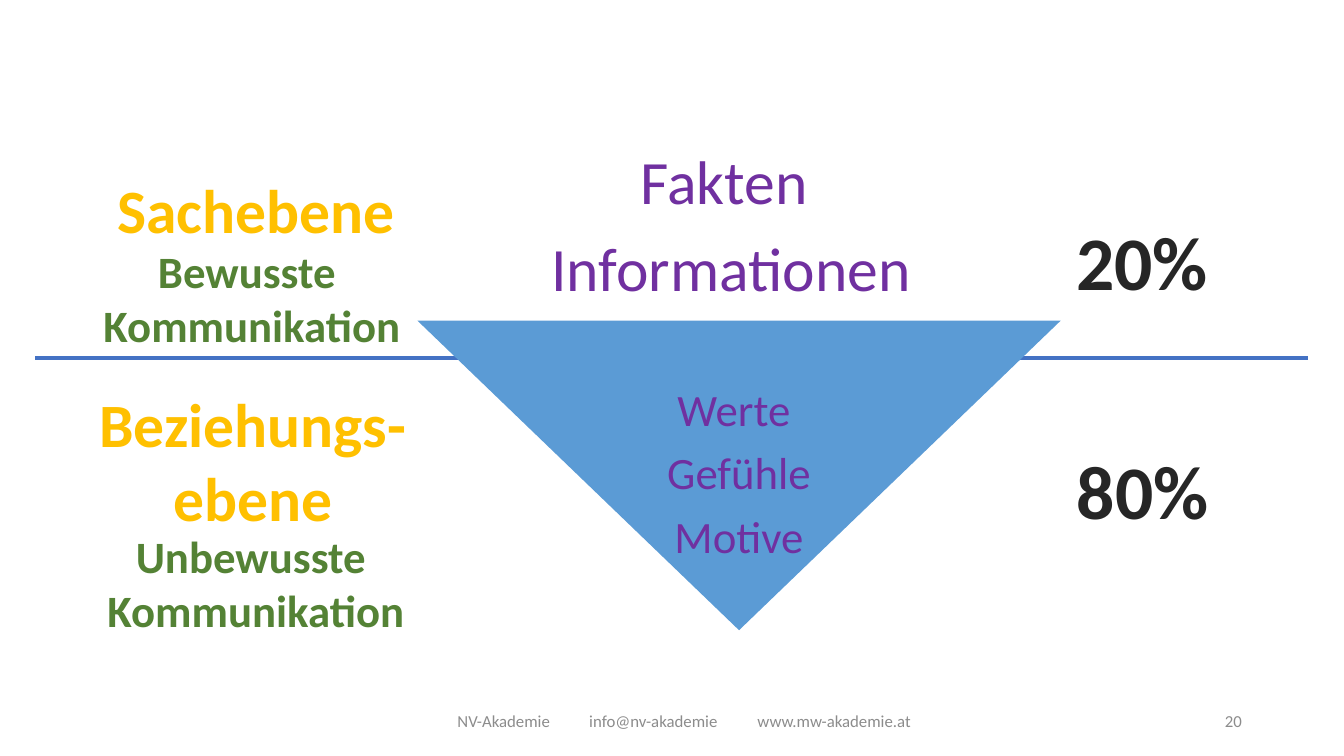
import pptx
import pptx.util
import pptx.dml.color
import pptx.enum.shapes
import pptx.enum.text
import pptx.oxml
import pptx.oxml.ns
from pptx.util import Cm

FONT = "Calibri"
COLORS = {
    "line": "4472C4",
    "cone": "5B9BD5",
    "word": "7030A0",
    "level": "FFC000",
    "mode": "548235",
    "share": "262626",
    "foot": "8C8C8C",
}
ALIGN = pptx.enum.text.PP_ALIGN
ANCHOR = pptx.enum.text.MSO_ANCHOR
FIT = pptx.enum.text.MSO_AUTO_SIZE


def color(name):
    return pptx.dml.color.RGBColor.from_string(COLORS[name])


def place(shape, left, top, width, height):
    shape.left, shape.top = Cm(left), Cm(top)
    shape.width, shape.height = Cm(width), Cm(height)


def write(frame, lines, size, tone, bold=False, align=ALIGN.CENTER):
    """Fill a frame with one paragraph per line."""
    for i, line in enumerate(lines):
        para = frame.paragraphs[0] if i == 0 else frame.add_paragraph()
        para.alignment = align
        run = para.add_run()
        run.text = line
        run.font.name = FONT
        run.font.size = pptx.util.Pt(size)
        run.font.bold = bold
        run.font.color.rgb = color(tone)


def add_label(slide, lines, area, size, tone):
    """Bold heading that keeps its line breaks."""
    box = slide.shapes.add_textbox(0, 0, 0, 0)
    place(box, *area)
    box.text_frame.word_wrap = False
    box.text_frame.auto_size = FIT.SHAPE_TO_FIT_TEXT
    write(box.text_frame, lines, size, tone, bold=True)


def add_foot(slide, text, area, align):
    box = slide.shapes.add_textbox(0, 0, 0, 0)
    place(box, *area)
    frame = box.text_frame
    frame.word_wrap = True
    frame.vertical_anchor = ANCHOR.MIDDLE
    write(frame, [text], 12, "foot", align=align)
    return frame


def set_tabs(para, stops):
    props = para._p.get_or_add_pPr()
    tabs = pptx.oxml.parse_xml(
        "<a:tabLst %s/>" % pptx.oxml.ns.nsdecls("a"))
    for stop in stops:
        tab = tabs.makeelement(pptx.oxml.ns.qn("a:tab"),
                               {"pos": str(Cm(stop)), "algn": "l"})
        tabs.append(tab)
    props.append(tabs)


def fill_list(slide, index, lines, area, inset, size):
    """Centred list in a body placeholder, brought to the front."""
    body = slide.placeholders[index]
    place(body, *area)
    slide.shapes._spTree.append(body._element)
    frame = body.text_frame
    frame.word_wrap = True
    frame.auto_size = FIT.NONE
    frame.vertical_anchor = ANCHOR.MIDDLE
    frame.margin_left = frame.margin_right = Cm(inset)
    frame.margin_top = frame.margin_bottom = Cm(inset)
    write(frame, lines, size, "word")
    for para in frame.paragraphs:
        props = para._p.get_or_add_pPr()
        props.set("marL", "0")
        props.set("indent", "0")
        props.append(pptx.oxml.parse_xml(
            "<a:buNone %s/>" % pptx.oxml.ns.nsdecls("a")))
        para.line_spacing = 0.9
        para.space_before = pptx.util.Pt(0)
        para.space_after = pptx.util.Pt(round(size / 3, 1))


def add_rule(slide, left, right, top):
    rule = slide.shapes.add_connector(
        pptx.enum.shapes.MSO_CONNECTOR.STRAIGHT,
        Cm(left), Cm(top), Cm(right), Cm(top))
    rule.line.color.rgb = color("line")
    rule.line.width = pptx.util.Pt(2.25)
    rule._element.spPr.append(pptx.oxml.parse_xml(
        "<a:effectLst %s/>" % pptx.oxml.ns.nsdecls("a")))


def add_cone(slide, area):
    """Trapezoid narrowed to a tip and turned upside down."""
    cone = slide.shapes.add_shape(
        pptx.enum.shapes.MSO_SHAPE.TRAPEZOID, 0, 0, 0, 0)
    place(cone, *area)
    cone.adjustments[0] = 1.04
    cone.rotation = 180
    cone.shadow.inherit = False
    cone.fill.solid()
    cone.fill.fore_color.rgb = color("cone")
    cone.line.fill.background()


def main():
    deck = pptx.Presentation()
    deck.slide_width, deck.slide_height = Cm(33.87), Cm(19.05)
    slide = deck.slides.add_slide(deck.slide_layouts.get_by_name("Two Content"))
    title = slide.shapes.title._element
    title.getparent().remove(title)

    # Waterline and footer
    add_rule(slide, 0.89, 32.97, 9.02)
    foot = add_foot(slide, "NV-Akademie\tinfo@nv-akademie\twww.mw-akademie.at",
                    (11.23, 17.65, 12.12, 1.02), ALIGN.LEFT)
    foot.margin_left = Cm(0.3)
    set_tabs(foot.paragraphs[0], [3.32, 7.56])
    add_foot(slide, "20", (23.93, 17.65, 7.62, 1.02), ALIGN.RIGHT)

    # Cone with the visible and the hidden part
    cone = (10.52, 8.08, 16.21, 7.8)
    fill_list(slide, 1, ["Fakten ", "Informationen"],
              (10.13, 1.98, 16.59, 7.52), 0.15, 44)
    add_cone(slide, cone)
    fill_list(slide, 2, ["Werte ", "Gefühle", "Motive"], cone, 0.1, 32)

    # Levels, modes and shares
    for lines, area, size, tone in [
        (["Sachebene"], (2.67, 4.22, 7.57, 2.13), 44, "level"),
        (["Beziehungs-", "ebene"], (2.21, 9.6, 8.33, 4.01), 44, "level"),
        (["Unbewusste ", "Kommunikation"], (2.41, 13.21, 8.08, 3), 32, "mode"),
        (["Bewusste ", "Kommunikation"], (2.31, 6.02, 8.08, 3), 32, "mode"),
        (["20%"], (26.85, 5.28, 3.86, 2.57), 54, "share"),
        (["80%"], (26.87, 11.05, 3.86, 2.57), 54, "share"),
    ]:
        add_label(slide, lines, area, size, tone)

    deck.save("out.pptx")


if __name__ == "__main__":
    main()
